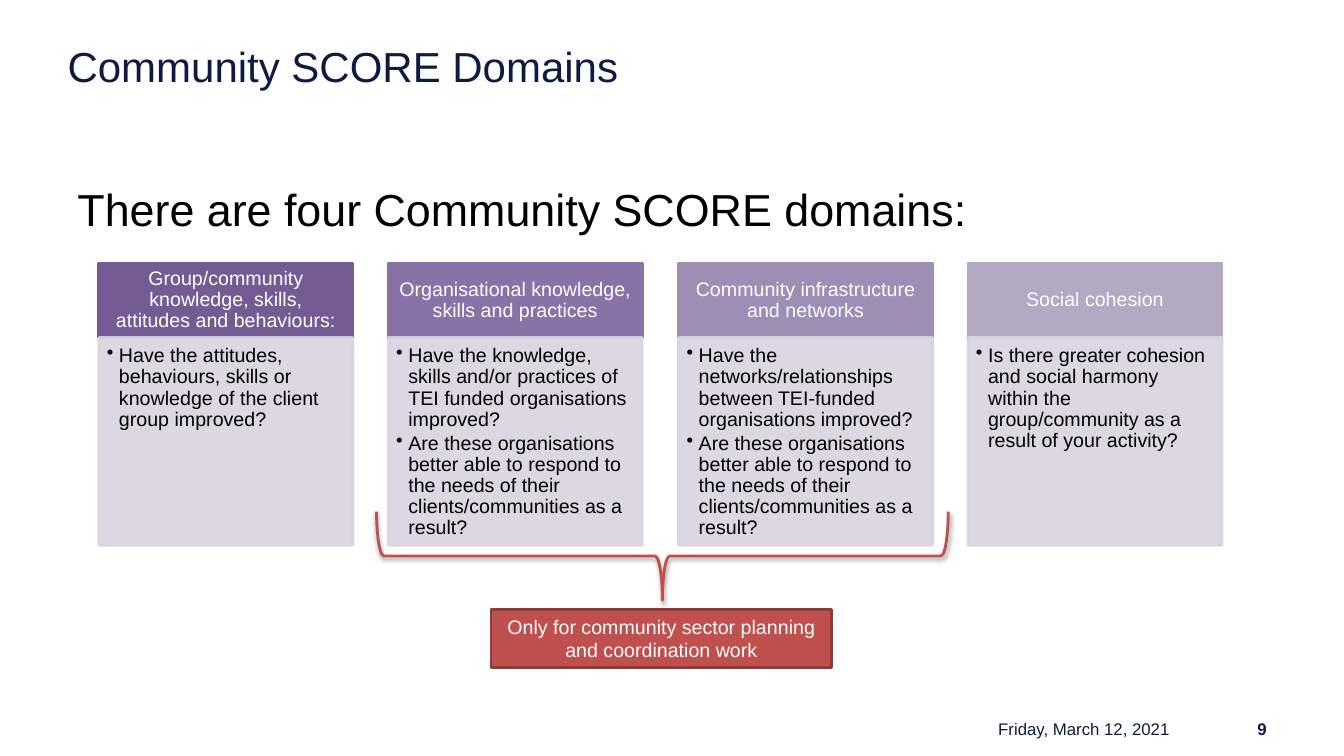
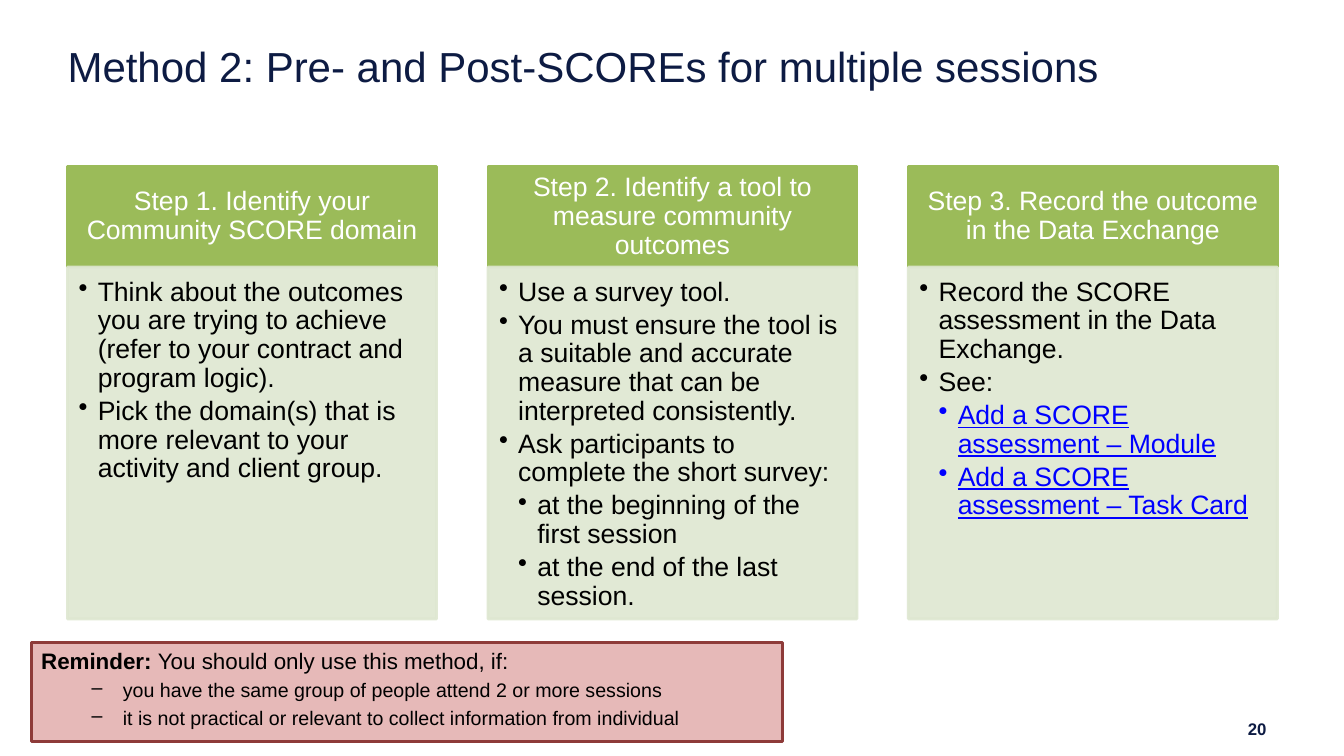
"""Build two slides on Community SCORE domains and the pre- and post-SCORE method."""
from lxml.etree import SubElement
from pptx import Presentation
from pptx.dml.color import RGBColor
from pptx.enum.shapes import MSO_SHAPE
from pptx.enum.text import MSO_ANCHOR, MSO_AUTO_SIZE, PP_ALIGN
from pptx.oxml.ns import qn
from pptx.util import Pt

PX = 9144
FONT = "Arial"
NAVY, BLACK, WHITE, LINK = "0D1B43", "000000", "FFFFFF", "0000FF"
RED, DARK_RED, PINK = "C0504D", "8E3B39", "E6B9B8"
LILAC, GREEN, PALE_GREEN = "D8D3E0", "9BBB59", "DEE7D1"

RESPONSE = (
    "Are these organisations better able to respond to the needs of their "
    "clients/communities as a result?"
)
DOMAINS = [
    ("Group/community knowledge, skills, attitudes and behaviours:", "745B93", [
        (1, "Have the attitudes, behaviours, skills or knowledge of the client group improved?", BLACK),
    ]),
    ("Organisational knowledge, skills and practices", "8973A6", [
        (1, "Have the knowledge, skills and/or practices of TEI funded organisations improved?", BLACK),
        (1, RESPONSE, BLACK),
    ]),
    ("Community infrastructure and networks", "9E8EB5", [
        (1, "Have the networks/relationships between TEI-funded organisations improved?", BLACK),
        (1, RESPONSE, BLACK),
    ]),
    ("Social cohesion", "B4A9C5", [
        (1, "Is there greater cohesion and social harmony within the group/community "
            "as a result of your activity?", BLACK),
    ]),
]
STEPS = [
    ("Step 1. Identify your Community SCORE domain", GREEN, [
        (1, "Think about the outcomes you are trying to achieve "
            "(refer to your contract and program logic).", BLACK),
        (1, "Pick the domain(s) that is more relevant to your activity and client group.", BLACK),
    ]),
    ("Step 2. Identify a tool to measure community outcomes", GREEN, [
        (1, "Use a survey tool.", BLACK),
        (1, "You must ensure the tool is a suitable and accurate measure "
            "that can be interpreted consistently.", BLACK),
        (1, "Ask participants to complete the short survey:", BLACK),
        (2, "at the beginning of the first session", BLACK),
        (2, "at the end of the last session.", BLACK),
    ]),
    ("Step 3. Record the outcome in the Data Exchange", GREEN, [
        (1, "Record the SCORE assessment in the Data Exchange.", BLACK),
        (1, "See:", BLACK),
        (2, "Add a SCORE assessment – Module", LINK),
        (2, "Add a SCORE assessment – Task Card", LINK),
    ]),
]
CONDITIONS = [
    "you have the same group of people attend 2 or more sessions",
    "it is not practical or relevant to collect information from individual",
]


def rgb(value):
    """Turn a hex string into a colour."""
    return RGBColor.from_string(value)


def box(*lengths):
    """Turn px lengths into EMU."""
    return [length * PX for length in lengths]


def set_margins(frame, left, top, right, bottom):
    """Set the four text insets in px."""
    frame.margin_left, frame.margin_top, frame.margin_right, frame.margin_bottom = box(
        left, top, right, bottom)


def style(paragraph, size, color, bold=False, align=PP_ALIGN.LEFT):
    """Format every run of a paragraph."""
    paragraph.alignment = align
    for run in paragraph.runs:
        run.font.name, run.font.size, run.font.bold = FONT, Pt(size), bold
        run.font.color.rgb = rgb(color)


def bullet(paragraph, mark, left, hanging):
    """Give a paragraph a bullet with a hanging indent in px."""
    properties = paragraph._p.get_or_add_pPr()
    properties.set("marL", str(left * PX))
    properties.set("indent", str(-hanging * PX))
    SubElement(properties, qn("a:buChar")).set("char", mark)


def add_title(slide, text):
    """Fill and place the title placeholder."""
    title = slide.shapes.title
    title.left, title.top, title.width, title.height = box(67, 40, 1200, 66)
    frame = title.text_frame
    frame.text = text
    frame.auto_size = MSO_AUTO_SIZE.NONE
    frame.vertical_anchor = MSO_ANCHOR.TOP
    set_margins(frame, 0, 0, 0, 0)
    style(frame.paragraphs[0], 30, NAVY)


def add_label(slide, area, text, size, color, bold=False,
              align=PP_ALIGN.LEFT, anchor=MSO_ANCHOR.TOP):
    """Add a line of plain text."""
    frame = slide.shapes.add_textbox(*box(*area)).text_frame
    frame.word_wrap = True
    frame.vertical_anchor = anchor
    frame.text = text
    style(frame.paragraphs[0], size, color, bold, align)


def add_footer(slide, number, date=None):
    """Add the slide number and, where given, the date."""
    footer = {"size": 12, "color": NAVY, "align": PP_ALIGN.RIGHT, "anchor": MSO_ANCHOR.MIDDLE}
    add_label(slide, (1157, 712, 109, 23), number, bold=True, **footer)
    if date:
        add_label(slide, (859, 712, 311, 23), date, **footer)


def add_panel(slide, area, fill, line, anchor=MSO_ANCHOR.TOP):
    """Add a filled rectangle ready for text."""
    panel = slide.shapes.add_shape(MSO_SHAPE.RECTANGLE, *box(*area))
    panel.shadow.inherit = False
    panel.fill.solid()
    panel.fill.fore_color.rgb = rgb(fill)
    panel.line.color.rgb = rgb(line)
    panel.line.width = Pt(2)
    panel.text_frame.word_wrap = True
    panel.text_frame.vertical_anchor = anchor
    return panel


def add_card(slide, head_area, body_height, card, tint, size, head_margins, body_margins, indent):
    """Add a heading panel with a tinted bullet panel below it."""
    heading, color, items = card
    left, top, width, height = head_area

    head = add_panel(slide, head_area, color, color, MSO_ANCHOR.MIDDLE).text_frame
    set_margins(head, *head_margins)
    head.text = heading
    head.paragraphs[0].line_spacing = 0.9
    style(head.paragraphs[0], size, WHITE, align=PP_ALIGN.CENTER)

    body = add_panel(slide, (left, top + height, width, body_height), tint, tint)
    for shade in body._element.spPr.iter(qn("a:srgbClr")):
        SubElement(shade, qn("a:alpha")).set("val", "90000")
    frame = body.text_frame
    set_margins(frame, *body_margins)
    frame.text = "\n".join(text for _, text, _ in items)
    for paragraph, (level, _, ink) in zip(frame.paragraphs, items):
        bullet(paragraph, "•", level * indent, indent)
        paragraph.line_spacing = 0.9
        paragraph.space_after = Pt(round(size * 0.15))
        style(paragraph, size, ink)
        if ink == LINK:
            paragraph.runs[0].font.underline = True


def add_cards(slide, cards, left, top, span, width, head_height, **look):
    """Spread cards evenly over a span."""
    pitch = (span - width) / (len(cards) - 1)
    for index, card in enumerate(cards):
        area = (left + round(index * pitch), top, width, head_height)
        add_card(slide, area, card=card, **look)


def add_brace(slide, area):
    """Add a brace turned to point down, with a soft shadow."""
    brace = slide.shapes.add_shape(MSO_SHAPE.LEFT_BRACE, *box(*area))
    brace.rotation = 270
    brace.fill.background()
    brace.line.color.rgb = rgb(RED)
    brace.line.width = Pt(2)
    brace.shadow.inherit = False
    effects = brace._element.spPr.find(qn("a:effectLst"))
    shadow = SubElement(effects, qn("a:outerShdw"), blurRad="40000", dist="20000",
                        dir="5400000", rotWithShape="0")
    shade = SubElement(shadow, qn("a:srgbClr"), val=BLACK)
    SubElement(shade, qn("a:alpha"), val="38000")


def add_reminder(slide):
    """Add the reminder panel with its dashed conditions."""
    frame = add_panel(slide, (31, 637, 745, 99), PINK, DARK_RED).text_frame
    lead = frame.paragraphs[0]
    for text in ("Reminder: ", "You should only use this method, if:"):
        lead.add_run().text = text
    style(lead, 16, BLACK)
    lead.runs[0].font.bold = True
    for condition in CONDITIONS:
        paragraph = frame.add_paragraph()
        paragraph.text = condition
        bullet(paragraph, "–", 81, 31)
        paragraph.space_before = Pt(3)
        style(paragraph, 14, BLACK)


def build_domains(slide):
    """Build the slide of the four domains."""
    add_title(slide, "Community SCORE Domains")
    add_label(slide, (67, 175, 1200, 73), "There are four Community SCORE domains:", 32, BLACK)
    add_cards(slide, DOMAINS, 98, 261, 1114, 252, 74, body_height=206, tint=LILAC, size=14,
              head_margins=(11, 6, 11, 6), body_margins=(8, 8, 11, 12), indent=12)
    add_brace(slide, (613, 268, 88, 567))
    scope = add_panel(slide, (487, 605, 338, 57), RED, DARK_RED).text_frame
    scope.text = "Only for community sector planning and coordination work"
    style(scope.paragraphs[0], 14, WHITE, align=PP_ALIGN.CENTER)
    add_footer(slide, "9", "Friday, March 12, 2021")


def build_method(slide):
    """Build the slide of the three steps."""
    add_title(slide, "Method 2: Pre- and Post-SCOREs for multiple sessions")
    add_cards(slide, STEPS, 67, 165, 1200, 366, 100, body_height=349, tint=PALE_GREEN, size=19,
              head_margins=(15, 8, 15, 8), body_margins=(11, 11, 15, 17), indent=19)
    add_reminder(slide)
    add_footer(slide, "20")


def main():
    """Build and save the presentation."""
    deck = Presentation()
    deck.slide_width, deck.slide_height = box(1333, 750)
    title_only = deck.slide_layouts[5]
    for build in (build_domains, build_method):
        build(deck.slides.add_slide(title_only))
    deck.save("out.pptx")


if __name__ == "__main__":
    main()
